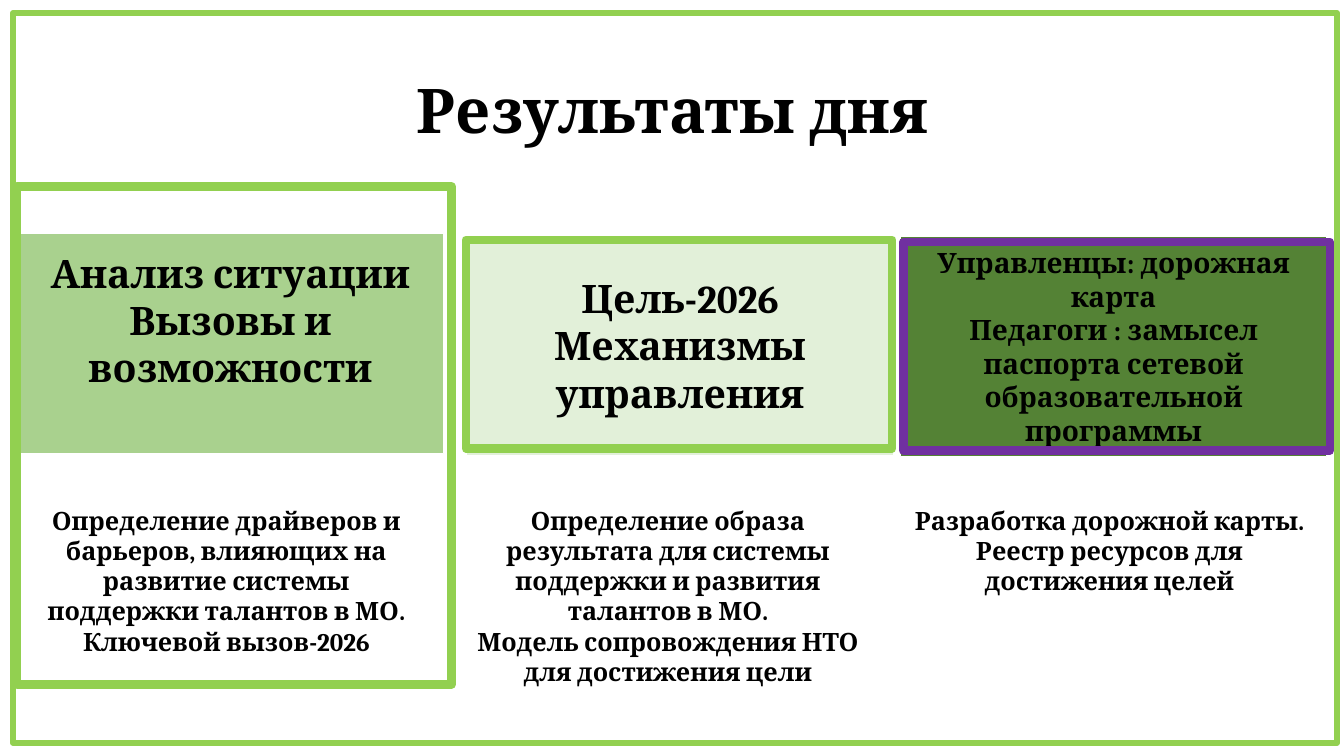
from dataclasses import dataclass

from pptx import Presentation
from pptx.dml.color import RGBColor
from pptx.enum.shapes import MSO_SHAPE
from pptx.enum.text import MSO_ANCHOR, MSO_AUTO_SIZE, PP_ALIGN
from pptx.util import Emu, Pt

RECTANGLE = MSO_SHAPE.RECTANGLE
CENTER = PP_ALIGN.CENTER
MIDDLE = MSO_ANCHOR.MIDDLE
FIT_SHAPE = MSO_AUTO_SIZE.SHAPE_TO_FIT_TEXT
NO_AUTOFIT = MSO_AUTO_SIZE.NONE
EMU_PER_PX = 9144  # 100 px to the inch
TITLE_ONLY_LAYOUT = 5


@dataclass(frozen=True)
class Theme:
    font: str = "Cambria"
    text: str = "000000"
    card_line: str = "FFFFFF"
    analysis: str = "A9D18E"
    goal: str = "E2F0D9"
    roadmap: str = "548235"
    green_frame: str = "92D050"
    purple_frame: str = "7030A0"
    title_size: int = 44
    heading_size: int = 28
    small_heading_size: int = 20
    caption_size: int = 18


THEME = Theme()

# heading box, fill, heading size, space under the heading, heading
CARDS = [
    ((17, 231, 423, 219), THEME.analysis, THEME.heading_size, 51,
     "Анализ ситуации\nВызовы и возможности"),
    ((463, 233, 423, 219), THEME.goal, THEME.heading_size, 5,
     "Цель-2026\nМеханизмы управления"),
    ((893, 234, 423, 219), THEME.roadmap, THEME.small_heading_size, 5,
     "Управленцы: дорожная карта\n"
     "Педагоги : замысел паспорта сетевой образовательной программы"),
]

CAPTIONS = [
    ((17, 496, 415, 162),
     "Определение драйверов и барьеров, влияющих на развитие системы "
     "поддержки талантов в МО.\nКлючевой вызов-2026"),
    ((455, 496, 415, 162),
     "Определение образа результата для системы поддержки и развития "
     "талантов в МО.\nМодель сопровождения НТО для достижения цели"),
    ((893, 496, 415, 101),
     "Разработка дорожной карты.\nРеестр ресурсов для достижения целей"),
]

FRAMES = [
    ((13, 13, 1313, 724), THEME.green_frame, 4.5),
    ((462, 238, 423, 207), THEME.green_frame, 6),
    ((17, 185, 431, 494), THEME.green_frame, 6),
    ((896, 240, 423, 207), THEME.purple_frame, 6),
]


def px(length):
    return Emu(length * EMU_PER_PX)


def color(code):
    return RGBColor.from_string(code)


def write_centered(frame, text, size):
    frame.text = text
    frame.word_wrap = True
    for paragraph in frame.paragraphs:
        paragraph.alignment = CENTER
        for run in paragraph.runs:
            run.font.name = THEME.font
            run.font.size = Pt(size)
            run.font.bold = True
            run.font.color.rgb = color(THEME.text)


def add_title(slide, box, text):
    title = slide.shapes.title
    title.left, title.top, title.width, title.height = map(px, box)
    frame = title.text_frame
    write_centered(frame, text, THEME.title_size)
    frame.vertical_anchor = MIDDLE
    frame.auto_size = NO_AUTOFIT
    frame.paragraphs[0].line_spacing = 0.9


def add_rectangle(slide, box, line, width, fill=None):
    rectangle = slide.shapes.add_shape(RECTANGLE, *map(px, box))
    rectangle.shadow.inherit = False
    rectangle.line.color.rgb = color(line)
    rectangle.line.width = Pt(width)
    if fill:
        rectangle.fill.solid()
        rectangle.fill.fore_color.rgb = color(fill)
    else:
        rectangle.fill.background()
    return rectangle


def add_card(slide, box, fill, size, bottom_margin, heading):
    card = add_rectangle(slide, box, THEME.card_line, 1, fill)
    frame = card.text_frame
    write_centered(frame, heading, size)
    frame.vertical_anchor = MIDDLE
    frame.margin_bottom = px(bottom_margin)


def add_caption(slide, box, text):
    frame = slide.shapes.add_textbox(*map(px, box)).text_frame
    write_centered(frame, text, THEME.caption_size)
    frame.auto_size = FIT_SHAPE


def main():
    presentation = Presentation()
    presentation.slide_width = px(1333)
    presentation.slide_height = px(750)
    layout = presentation.slide_layouts[TITLE_ONLY_LAYOUT]
    slide = presentation.slides.add_slide(layout)

    add_title(slide, (92, 40, 1150, 145), "Результаты дня")
    for card in CARDS:
        add_card(slide, *card)
    for caption in CAPTIONS:
        add_caption(slide, *caption)
    for frame in FRAMES:
        add_rectangle(slide, *frame)

    presentation.save("out.pptx")


if __name__ == "__main__":
    main()
